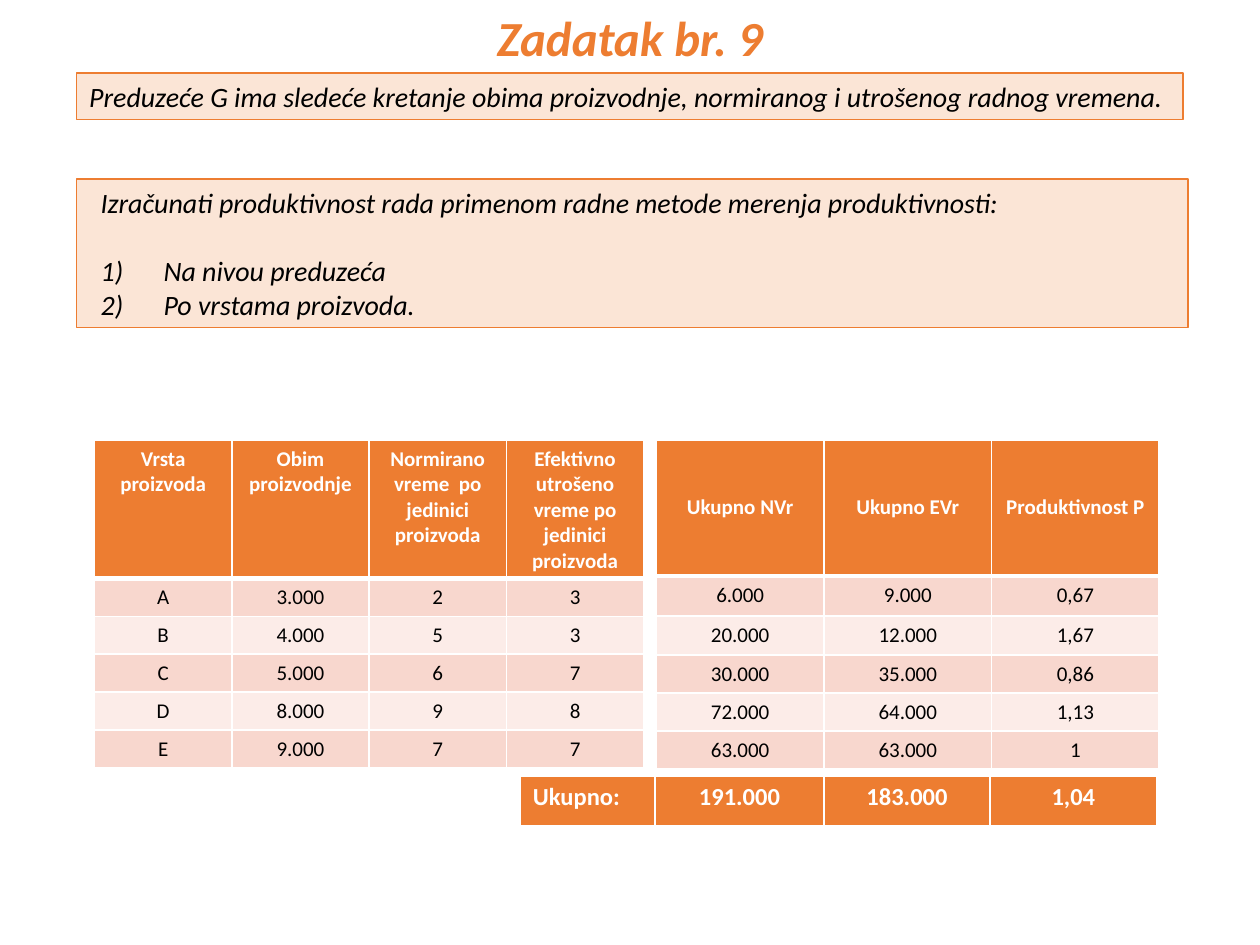
from pptx import Presentation
from pptx.dml.color import RGBColor
from pptx.enum.shapes import MSO_SHAPE as Shape
from pptx.enum.text import MSO_ANCHOR as Anchor, MSO_AUTO_SIZE as AutoSize, PP_ALIGN as Align
from pptx.oxml.ns import qn
from pptx.util import Inches, Pt
from lxml.etree import SubElement

ORANGE, CREAM, WHITE, BLACK = "ED7D31", "FBE5D6", "FFFFFF", "000000"
BANDS = ["F8D7CE", "FCECE8"]


def colour(value):
    return RGBColor.from_string(value)


class SlideBuilder:
    font = "Calibri"

    def __init__(self, slide):
        self.slide = slide

    def add_text(self, paragraph, text, align, size, ink, **styles):
        paragraph.alignment = align
        run = paragraph.add_run()
        run.text = text
        run.font.color.rgb = colour(ink)
        for name, value in {"name": self.font, "size": Pt(size), **styles}.items():
            setattr(run.font, name, value)

    def title(self, text, left, top, width, height):
        box = self.slide.shapes.add_textbox(*map(Inches, (left, top, width, height)))
        box.text_frame.word_wrap = False
        box.text_frame.auto_size = AutoSize.SHAPE_TO_FIT_TEXT
        self.add_text(box.text_frame.paragraphs[0], text, Align.CENTER, 28, ORANGE,
                      bold=True, italic=True)

    def panel(self, text, left, top, width, height, indent=0, steps=()):
        box = self.slide.shapes.add_shape(
            Shape.RECTANGLE, *map(Inches, (left, top, width, height)))
        box.shadow.inherit = False
        box.fill.solid()
        box.fill.fore_color.rgb = colour(CREAM)
        box.line.color.rgb = colour(ORANGE)
        box.line.width = Pt(0.75)
        frame = box.text_frame
        frame.word_wrap = True
        frame.auto_size = AutoSize.SHAPE_TO_FIT_TEXT
        intro = frame.paragraphs[0]
        self.add_text(intro, text, Align.JUSTIFY, 16, BLACK, italic=True)
        intro._p.get_or_add_pPr().set("marL", str(Inches(indent)))
        for index, step in enumerate(steps):
            item = frame.add_paragraph()
            self.add_text(item, step, Align.JUSTIFY, 16, BLACK, italic=True)
            item.space_before = Pt(0 if index else 19.5)
            properties = item._p.get_or_add_pPr()
            properties.set("marL", str(Inches(indent + 0.5)))
            properties.set("indent", str(Inches(-0.5)))
            SubElement(properties, qn("a:buFont"), typeface="+mj-lt")
            SubElement(properties, qn("a:buAutoNum"), type="arabicParenR")

    def cell(self, cell, text, fill, header, size, align, anchor):
        properties = cell._tc.get_or_add_tcPr()
        for side in ("lnL", "lnR", "lnT", "lnB"):
            width = Pt(3 if header and side == "lnB" else 1)
            line = SubElement(properties, qn(f"a:{side}"), w=str(width))
            SubElement(SubElement(line, qn("a:solidFill")), qn("a:srgbClr"), val=WHITE)
        cell.fill.solid()
        cell.fill.fore_color.rgb = colour(fill)
        cell.vertical_anchor = anchor
        self.add_text(cell.text_frame.paragraphs[0], text, align, size,
                      WHITE if header else BLACK, bold=header)

    def table(self, rows, left, top, widths, heights, size=12,
              header_anchor=Anchor.TOP, first_align=Align.CENTER):
        grid = self.slide.shapes.add_table(
            len(rows), len(widths),
            *map(Inches, (left, top, sum(widths), sum(heights)))).table
        for column, width in zip(grid.columns, widths):
            column.width = Inches(width)
        for r, (values, height) in enumerate(zip(rows, heights)):
            grid.rows[r].height = Inches(height)
            header = r == 0
            for c, value in enumerate(values):
                self.cell(grid.cell(r, c), value,
                          ORANGE if header else BANDS[(r - 1) % 2], header, size,
                          Align.CENTER if c else first_align,
                          header_anchor if header else Anchor.TOP)


def main():
    deck = Presentation()
    deck.slide_width, deck.slide_height = Inches(10), Inches(7.5)
    page = SlideBuilder(deck.slides.add_slide(deck.slide_layouts[6]))

    page.title("Zadatak br. 9", 3.83, 0.01, 2.34, 0.57)
    page.panel("Preduzeće G ima sledeće kretanje obima proizvodnje, "
               "normiranog i utrošenog radnog vremena.", 0.61, 0.58, 8.78, 0.37)
    page.table([
        ["Vrsta proizvoda", "Obim proizvodnje", "Normirano vreme  po jedinici proizvoda",
         "Efektivno utrošeno vreme po jedinici proizvoda"],
        ["A", "3.000", "2", "3"],
        ["B", "4.000", "5", "3"],
        ["C", "5.000", "6", "7"],
        ["D", "8.000", "9", "8"],
        ["E", "9.000", "7", "7"],
    ], 0.75, 3.49, [1.09] * 4, [1.1] + [0.3] * 5)
    page.panel("Izračunati produktivnost rada primenom radne metode merenja produktivnosti:",
               0.61, 1.42, 8.82, 1.18, indent=0.09,
               steps=["Na nivou preduzeća", "Po vrstama proizvoda."])
    page.table([
        ["Ukupno NVr", "Ukupno EVr", "Produktivnost P"],
        ["6.000", "9.000", "0,67"],
        ["20.000", "12.000", "1,67"],
        ["30.000", "35.000", "0,86"],
        ["72.000", "64.000", "1,13"],
        ["63.000", "63.000", "1"],
    ], 5.21, 3.49, [1.33] * 3, [1.08, 0.32, 0.31] + [0.3] * 3, header_anchor=Anchor.MIDDLE)
    page.table([["Ukupno:", "191.000", "183.000", "1,04"]],
               4.13, 6.16, [1.07, 1.34, 1.32, 1.32], [0.41], size=14,
               first_align=Align.LEFT)

    deck.save("out.pptx")


if __name__ == "__main__":
    main()
